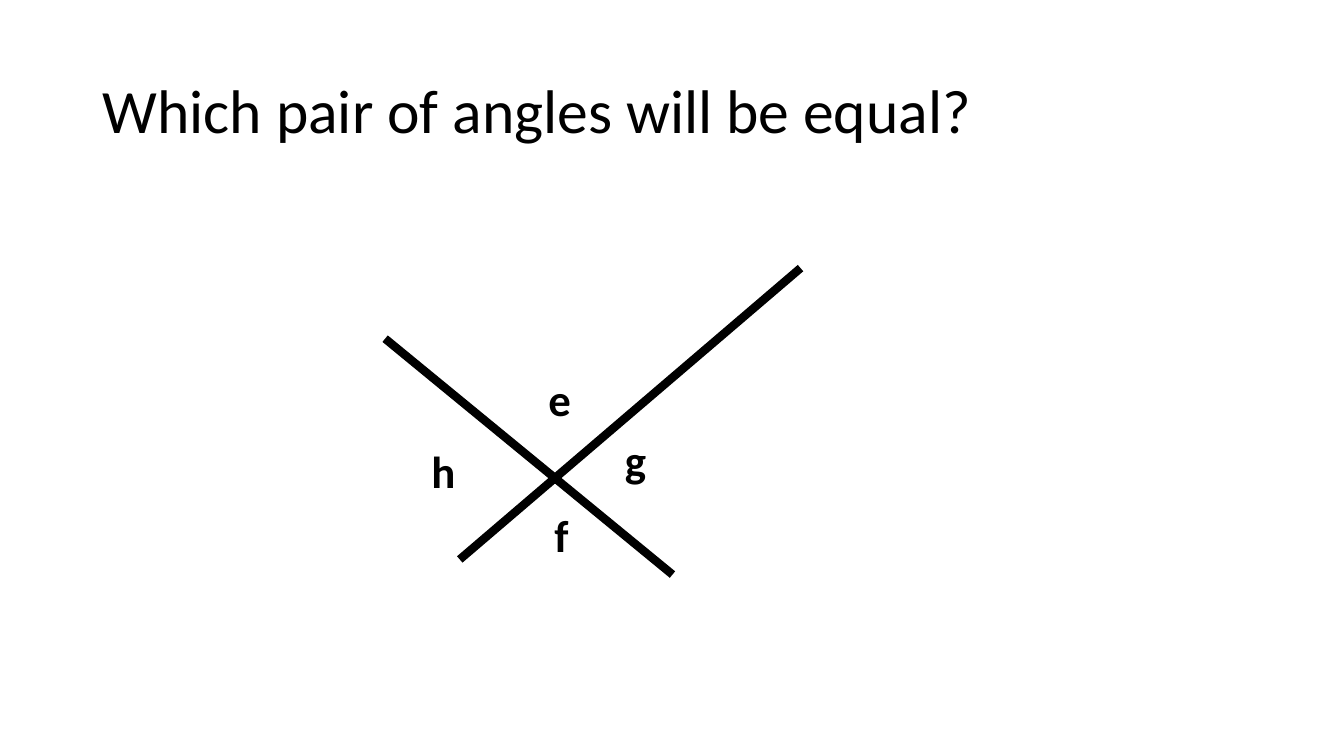
from lxml.etree import SubElement
from pptx import Presentation
from pptx.dml.color import RGBColor
from pptx.enum.shapes import MSO_CONNECTOR
from pptx.enum.text import MSO_ANCHOR, MSO_AUTO_SIZE
from pptx.oxml.ns import qn
from pptx.util import Inches, Pt

THEME = {
    "ink": RGBColor(0, 0, 0),
    "font": "Calibri",
    "question": Pt(44),
    "angle": Pt(32),
    "ray": Pt(6),
}

deck = Presentation()
deck.slide_width = Inches(13.33)
deck.slide_height = Inches(7.5)
slide = deck.slides.add_slide(deck.slide_layouts[6])


def add_label(wording, bounds, frame_format, font_format, line_spacing=1.0):
    label = slide.shapes.add_textbox(*map(Inches, bounds))
    frame = label.text_frame
    for name, value in frame_format.items():
        setattr(frame, name, value)
    paragraph = frame.paragraphs[0]
    paragraph.line_spacing = line_spacing
    run = paragraph.add_run()
    run.text = wording
    for name, value in font_format.items():
        setattr(run.font, name, value)
    run.font.color.rgb = THEME["ink"]


crossing_lines = [
    (7.94, 2.66, 4.56, 5.55),
    (3.82, 3.36, 6.67, 5.7),
]
for ends in crossing_lines:
    ray = slide.shapes.add_connector(MSO_CONNECTOR.STRAIGHT, *map(Inches, ends))
    ray.line.color.rgb = THEME["ink"]
    ray.line.width = THEME["ray"]
    SubElement(ray._element.spPr, qn("a:effectLst"))

angle_frame = {"word_wrap": True, "auto_size": MSO_AUTO_SIZE.SHAPE_TO_FIT_TEXT}
angle_font = {"name": THEME["font"], "size": THEME["angle"], "bold": True}
angles = {
    "e": (5.34, 3.64),
    "g": (6.1, 4.24),
    "f": (5.4, 4.99),
    "h": (4.18, 4.35),
}
for letter, corner in angles.items():
    add_label(letter, (*corner, 0.57, 0.64), angle_frame, angle_font)

add_label(
    "Which pair of angles will be equal?",
    (0.92, 0.4, 11.5, 1.45),
    {"word_wrap": True, "vertical_anchor": MSO_ANCHOR.MIDDLE},
    {"name": THEME["font"], "size": THEME["question"]},
    line_spacing=0.9,
)

deck.save("out.pptx")
